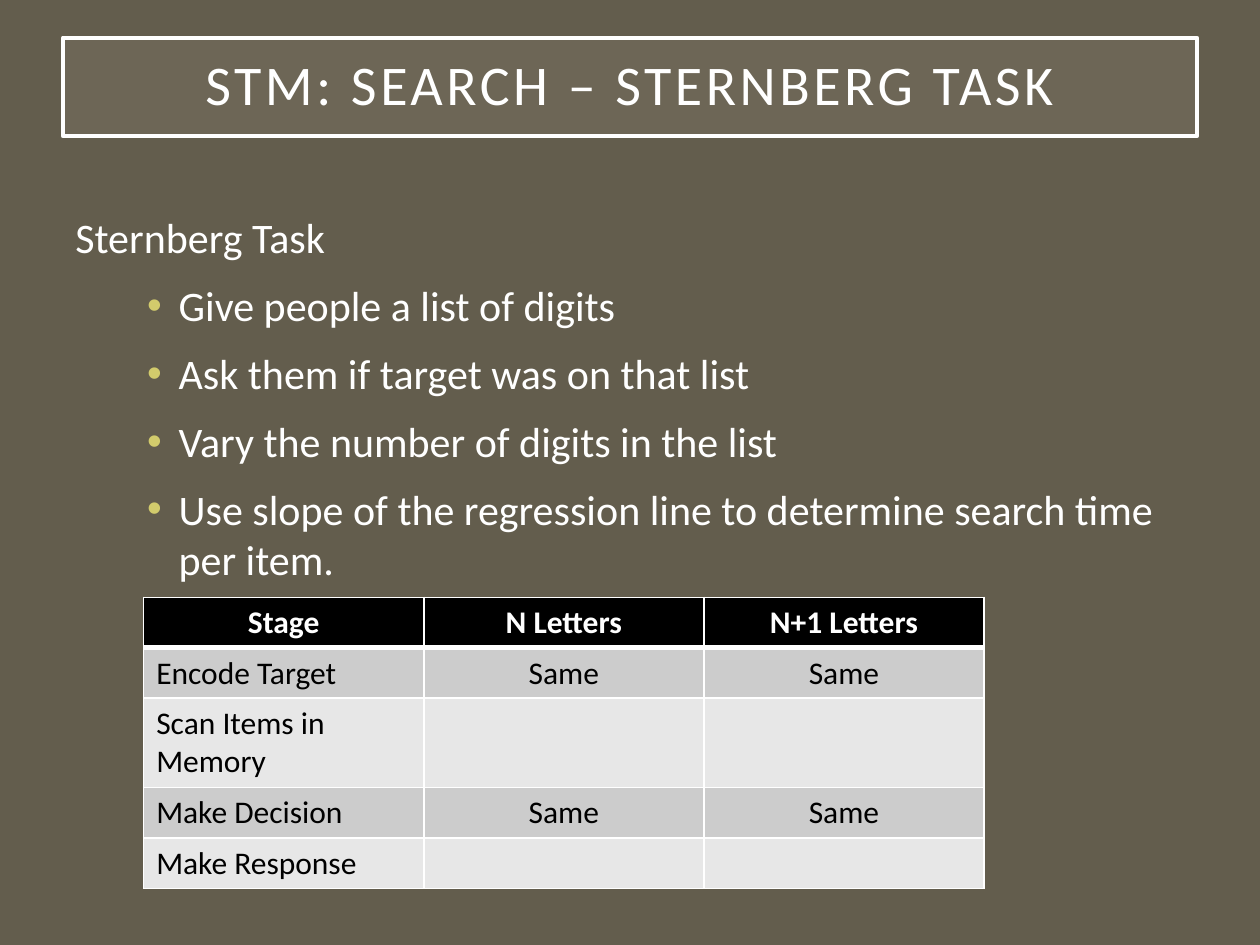
import pptx
import pptx.util
import pptx.dml.color
import pptx.enum.shapes
import pptx.enum.text
import pptx.oxml
import pptx.oxml.ns
from pptx.util import Inches

FONT = "Calibri"
WHITE = "FFFFFF"
BULLETS = [
    "Give people a list of digits",
    "Ask them if target was on that list",
    "Vary the number of digits in the list",
    "Use slope of the regression line to determine search time per item.",
]
STAGES = [
    ("Stage", "N Letters", "N+1 Letters"),
    ("Encode Target", "Same", "Same"),
    ("Scan Items in Memory", "", ""),
    ("Make Decision", "Same", "Same"),
    ("Make Response", "", ""),
]
ROW_HEIGHTS = [0.4, 0.4, 0.71, 0.4, 0.4]
ROW_FILLS = ["000000", "CCCCCC", "E7E7E7", "CCCCCC", "E7E7E7"]


def rgb(code):
    return pptx.dml.color.RGBColor.from_string(code)


def paint(fill, code):
    fill.solid()
    fill.fore_color.rgb = rgb(code)


def element(markup):
    tag, rest = markup[1:].split(" ", 1)
    namespace = pptx.oxml.ns.nsdecls("a")
    return pptx.oxml.parse_xml(f"<{tag} {namespace} {rest}")


def style(para, size, color=WHITE, bold=False):
    para.font.name = FONT
    para.font.size = pptx.util.Pt(size)
    para.font.bold = bold
    para.font.color.rgb = rgb(color)


def add_title(page, left, top, width, height):
    box = page.shapes.add_shape(
        pptx.enum.shapes.MSO_SHAPE.RECTANGLE, left, top, width, height
    )
    box.shadow.inherit = False
    paint(box.fill, "A7A08E")
    color = box.fill._xPr.find(".//" + pptx.oxml.ns.qn("a:srgbClr"))
    color.append(element('<a:alpha val="15000"/>'))
    box.line.color.rgb = rgb(WHITE)
    box.line.width = pptx.util.Pt(2.5)
    frame = box.text_frame
    frame.word_wrap = True
    frame.vertical_anchor = pptx.enum.text.MSO_ANCHOR.MIDDLE
    frame.margin_left = frame.margin_right = Inches(0.2)
    frame.margin_top = frame.margin_bottom = Inches(0.2)
    para = frame.paragraphs[0]
    para.alignment = pptx.enum.text.PP_ALIGN.CENTER
    para.line_spacing = 0.9
    style(para, 32)
    span = para.add_run()
    span.text = "STM: SEARCH – STERNBERG TASK"
    span._r.get_or_add_rPr().set("spc", "200")


def add_body(page, left, top, width, height):
    frame = page.shapes.add_textbox(left, top, width, height).text_frame
    frame.word_wrap = True
    frame.margin_top = Inches(0.6)
    heading = frame.paragraphs[0]
    heading.text = "Sternberg Task"
    style(heading, 24)
    for text in BULLETS:
        para = frame.add_paragraph()
        para.text = text
        para.space_before = pptx.util.Pt(10)
        style(para, 24)
        properties = para._p.get_or_add_pPr()
        properties.set("marL", str(Inches(0.82)))
        properties.set("indent", str(Inches(-0.25)))
        bullet = [
            element('<a:buClr ><a:srgbClr val="D2CB6C"/></a:buClr>'),
            element('<a:buFont typeface="Arial"/>'),
            element('<a:buChar char="•"/>'),
        ]
        defaults = properties.find(pptx.oxml.ns.qn("a:defRPr"))
        for part in bullet:
            defaults.addprevious(part)


def add_borders(cell, top, bottom):
    properties = cell._tc.get_or_add_tcPr()
    widths = {"lnL": 1, "lnR": 1, "lnT": top, "lnB": bottom}
    for index, (side, points) in enumerate(widths.items()):
        line = element(
            f'<a:{side} w="{pptx.util.Pt(points)}"><a:solidFill>'
            f'<a:srgbClr val="{WHITE}"/></a:solidFill></a:{side}>'
        )
        properties.insert(index, line)


def add_stage_table(page, left, top, width, height):
    table = page.shapes.add_table(
        len(STAGES), len(STAGES[0]), left, top, width, height
    ).table
    for row, row_height in zip(table.rows, ROW_HEIGHTS):
        row.height = Inches(row_height)
    for r, (texts, fill) in enumerate(zip(STAGES, ROW_FILLS)):
        header = r == 0
        for c, text in enumerate(texts):
            cell = table.cell(r, c)
            paint(cell.fill, fill)
            add_borders(cell, 3 if r == 1 else 1, 3 if header else 1)
            para = cell.text_frame.paragraphs[0]
            if text:
                para.text = text
            style(para, 18, WHITE if header else "000000", header)
            if header or c > 0:
                para.alignment = pptx.enum.text.PP_ALIGN.CENTER


def main():
    deck = pptx.Presentation()
    deck.slide_width = Inches(10)
    deck.slide_height = Inches(7.5)
    page = deck.slides.add_slide(deck.slide_layouts[6])
    paint(page.background.fill, "635D4D")
    add_title(page, Inches(0.5), Inches(0.3), Inches(9), Inches(0.78))
    add_body(page, Inches(0.5), Inches(1.08), Inches(9), Inches(6.2))
    add_stage_table(
        page, Inches(1.14), Inches(4.74), Inches(6.67), Inches(sum(ROW_HEIGHTS))
    )
    deck.save("out.pptx")


if __name__ == "__main__":
    main()
